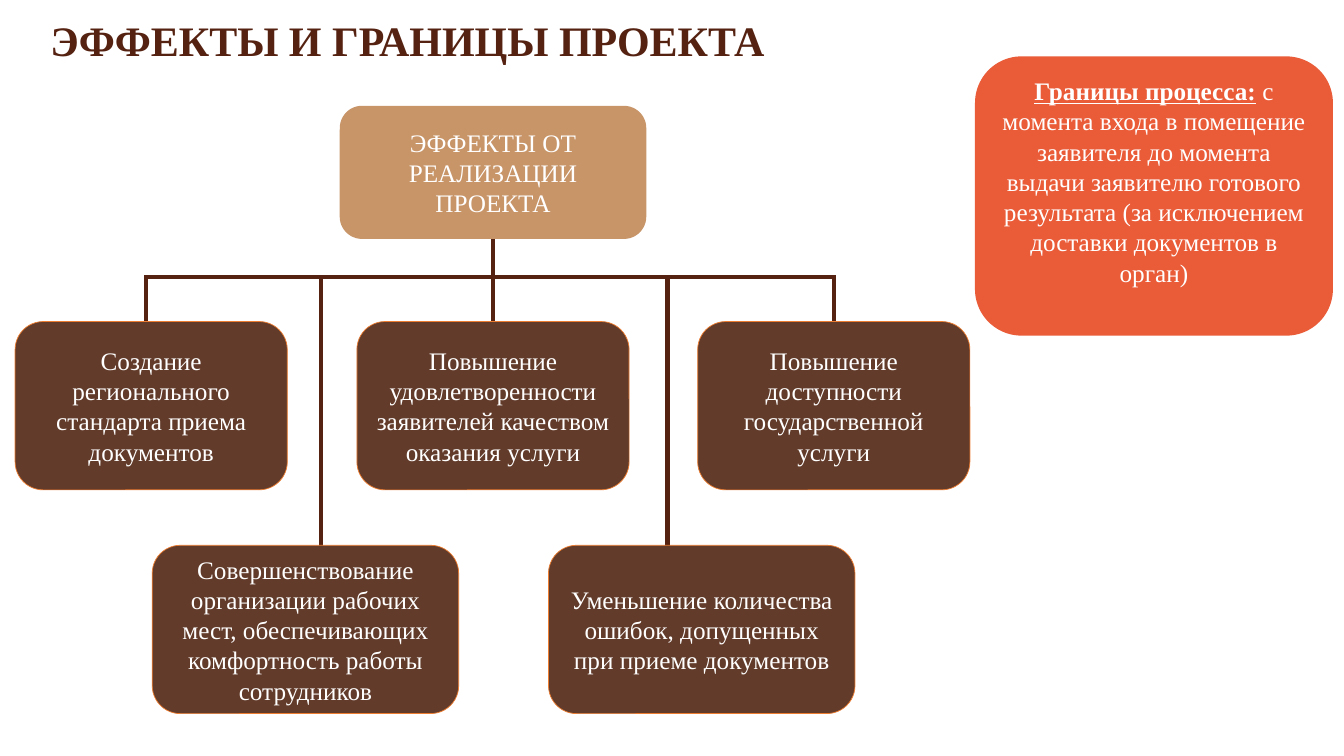
from dataclasses import dataclass

from lxml import etree
from pptx import Presentation
from pptx.dml.color import RGBColor
from pptx.enum.shapes import MSO_CONNECTOR, MSO_SHAPE
from pptx.enum.text import MSO_ANCHOR, PP_ALIGN
from pptx.oxml.ns import qn
from pptx.slide import Slide
from pptx.text.text import TextFrame
from pptx.util import Pt

ROUNDED = MSO_SHAPE.ROUNDED_RECTANGLE
STRAIGHT = MSO_CONNECTOR.STRAIGHT
MIDDLE = MSO_ANCHOR.MIDDLE
LEFT, CENTER = PP_ALIGN.LEFT, PP_ALIGN.CENTER

EMU_PER_PX = 9144  # 100 px to the inch
FONT = "Times New Roman"
COLORS = {
    "dark": "552211",
    "root": "C89569",
    "effect": "623B2A",
    "outline": "ED7D31",
    "scope": "EA5B38",
    "white": "FFFFFF",
}

SLIDE_WIDTH, SLIDE_HEIGHT = 1333, 750
UPPER_TOP, LOWER_TOP, EFFECT_HEIGHT = 319, 541, 167
UPPER_WIDTH, LOWER_WIDTH = 270, 304
ROOT_BOTTOM, RAIL_Y = 237, 275
RAIL_LEFT, ROOT_X, RAIL_RIGHT = 145, 489, 827


@dataclass(frozen=True)
class Run:
    text: str
    size: int = 18
    color: str = "white"
    bold: bool = False
    underline: bool = False


@dataclass(frozen=True)
class Box:
    left: int
    top: int
    width: int
    height: int
    fill: str
    runs: tuple[Run, ...]
    outline: str | None = None
    bottom_inset: int = 5


@dataclass(frozen=True)
class Link:
    x1: int
    y1: int
    x2: int
    y2: int


def px(length: int) -> int:
    return length * EMU_PER_PX


def rgb(name: str) -> RGBColor:
    return RGBColor.from_string(COLORS[name])


def effect(left: int, top: int, width: int, text: str) -> Box:
    return Box(left, top, width, EFFECT_HEIGHT, "effect", (Run(text),), "outline")


TITLE = Run("ЭФФЕКТЫ И ГРАНИЦЫ ПРОЕКТА", size=30, color="dark", bold=True)

BOXES = [
    Box(337, 105, 304, 132, "root", (Run("ЭФФЕКТЫ ОТ РЕАЛИЗАЦИИ ПРОЕКТА"),)),
    effect(15, UPPER_TOP, UPPER_WIDTH,
           "Создание регионального стандарта приема документов"),
    effect(354, UPPER_TOP, UPPER_WIDTH,
           "Повышение удовлетворенности заявителей качеством оказания услуги"),
    effect(692, UPPER_TOP, UPPER_WIDTH,
           "Повышение доступности государственной услуги"),
    effect(151, LOWER_TOP, LOWER_WIDTH,
           "Совершенствование организации рабочих мест, обеспечивающих "
           "комфортность работы сотрудников"),
    effect(544, LOWER_TOP, LOWER_WIDTH,
           "Уменьшение количества ошибок, допущенных при приеме документов"),
    Box(967, 56, 355, 277, "scope", (
        Run("Границы процесса:", bold=True, underline=True),
        Run(" ", bold=True),
        Run("с момента входа в помещение заявителя до момента выдачи заявителю "
            "готового результата (за исключением доставки документов в орган)"),
    ), bottom_inset=34),
]

UPPER_DROPS = [Link(x, RAIL_Y - 2, x, UPPER_TOP + 14)
               for x in (RAIL_LEFT, ROOT_X, RAIL_RIGHT)]
LOWER_DROPS = [Link(x, RAIL_Y - 2, x, LOWER_TOP + 9) for x in (318, 662)]
RAIL = Link(RAIL_LEFT, RAIL_Y, RAIL_RIGHT, RAIL_Y)
ROOT_STEM = Link(ROOT_X, ROOT_BOTTOM, ROOT_X, RAIL_Y)


def write_runs(frame: TextFrame, runs: tuple[Run, ...], alignment: PP_ALIGN) -> None:
    frame.word_wrap = True
    frame.vertical_anchor = MIDDLE
    paragraph = frame.paragraphs[0]
    paragraph.alignment = alignment
    for part in runs:
        run = paragraph.add_run()
        run.text = part.text
        run.font.name = FONT
        run.font.size = Pt(part.size)
        run.font.bold = part.bold
        run.font.underline = part.underline
        run.font.color.rgb = rgb(part.color)


def draw_title(slide: Slide) -> None:
    heading = slide.shapes.add_textbox(px(40), px(13), px(808), px(59))
    write_runs(heading.text_frame, (TITLE,), LEFT)
    heading.text_frame.paragraphs[0].line_spacing = 0.9


def draw_box(slide: Slide, box: Box) -> None:
    shape = slide.shapes.add_shape(
        ROUNDED, px(box.left), px(box.top), px(box.width), px(box.height))
    shape.shadow.inherit = False
    shape.fill.solid()
    shape.fill.fore_color.rgb = rgb(box.fill)
    if box.outline:
        shape.line.color.rgb = rgb(box.outline)
        shape.line.width = Pt(0.5)
    else:
        shape.line.fill.background()
    shape.text_frame.margin_bottom = px(box.bottom_inset)
    write_runs(shape.text_frame, box.runs, CENTER)


def draw_link(slide: Slide, link: Link) -> None:
    connector = slide.shapes.add_connector(
        STRAIGHT, px(link.x1), px(link.y1), px(link.x2), px(link.y2))
    connector.line.color.rgb = rgb("dark")
    connector.line.width = Pt(3)
    etree.SubElement(connector._element.spPr, qn("a:effectLst"))


def main() -> None:
    presentation = Presentation()
    presentation.slide_width = px(SLIDE_WIDTH)
    presentation.slide_height = px(SLIDE_HEIGHT)
    slide = presentation.slides.add_slide(presentation.slide_layouts[6])
    for link in LOWER_DROPS + UPPER_DROPS:
        draw_link(slide, link)
    draw_title(slide)
    for box in BOXES:
        draw_box(slide, box)
    for link in (RAIL, ROOT_STEM):
        draw_link(slide, link)
    presentation.save("out.pptx")


if __name__ == "__main__":
    main()
